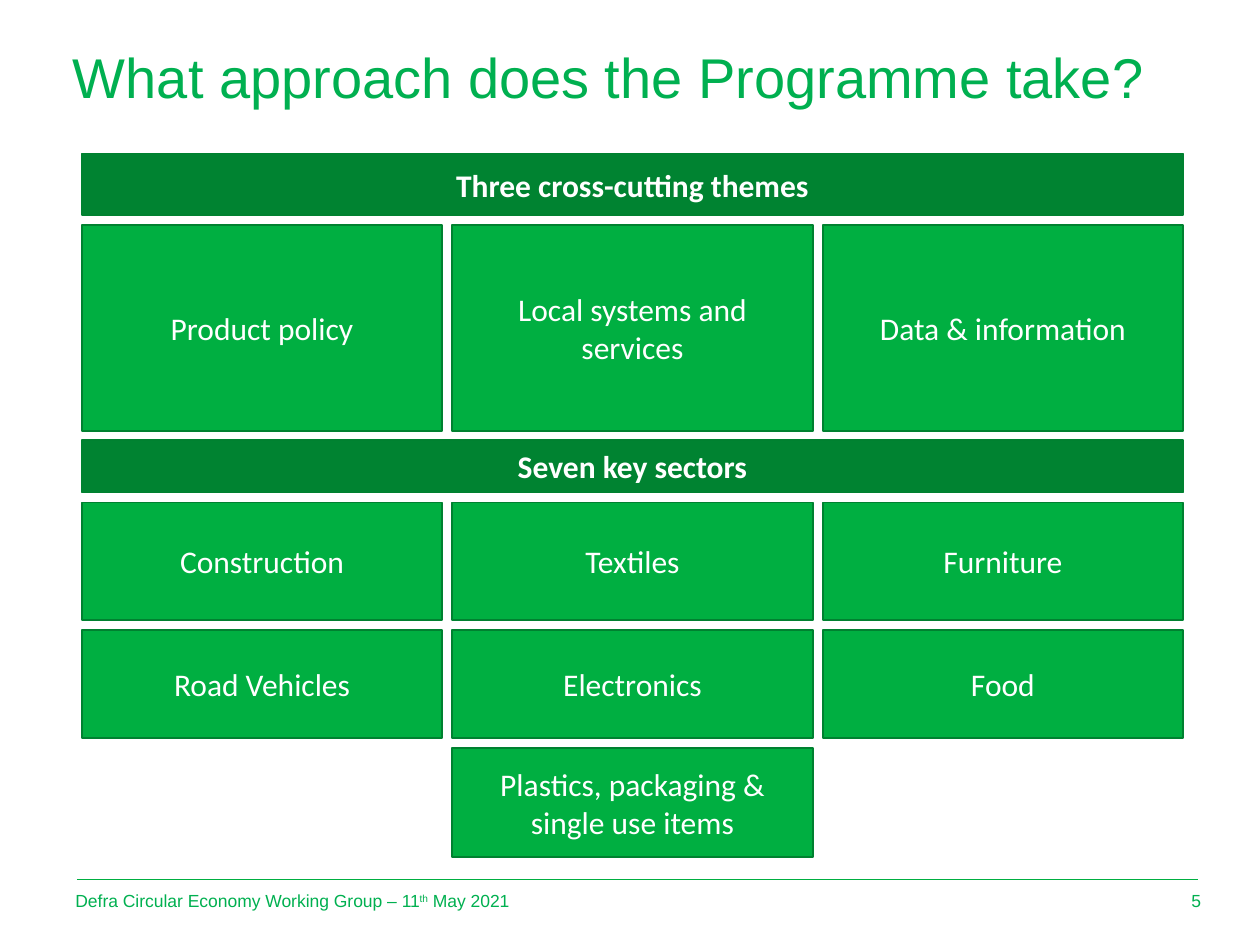
from lxml import etree
from pptx import Presentation
from pptx import util as u
from pptx.dml import color
from pptx.enum import shapes, text
from pptx.oxml import ns

Pt = u.Pt
GREEN, BRIGHT, DARK, EDGE, WHITE = "00B050", "00AF41", "008331", "008130", "FFFFFF"
GAP = 5.7
THEMES = [["Product policy", "Local systems and services", "Data & information"]]
SECTORS = [
    ["Construction", "Textiles", "Furniture"],
    ["Road Vehicles", "Electronics", "Food"],
    [None, "Plastics, packaging & single use items", None],
]


def rgb(value):
    """Turn a hex string into a colour."""
    return color.RGBColor.from_string(value)


def add_run(paragraph, words, size, font, ink, bold=False):
    """Add one styled run to a paragraph."""
    run = paragraph.add_run()
    run.text = words
    run.font.size, run.font.name, run.font.bold = Pt(size), font, bold
    run.font.color.rgb = rgb(ink)
    return run


def add_label(slide, box, align=text.PP_ALIGN.LEFT, anchor=text.MSO_ANCHOR.MIDDLE):
    """Add an empty wrapping text box and return its paragraph."""
    frame = slide.shapes.add_textbox(*map(Pt, box)).text_frame
    frame.word_wrap, frame.vertical_anchor = True, anchor
    paragraph = frame.paragraphs[0]
    paragraph.alignment = align
    return paragraph


def add_tile(slide, box, words, fill, bold=False):
    """Draw a filled rectangle with a centred caption."""
    tile = slide.shapes.add_shape(shapes.MSO_SHAPE.RECTANGLE, *map(Pt, box))
    tile.shadow.inherit = False
    tile.fill.solid()
    tile.fill.fore_color.rgb = rgb(fill)
    tile.line.color.rgb = rgb(EDGE)
    tile.line.width = Pt(1)
    frame = tile.text_frame
    frame.word_wrap, frame.vertical_anchor = True, text.MSO_ANCHOR.MIDDLE
    caption = frame.paragraphs[0]
    caption.alignment = text.PP_ALIGN.CENTER
    add_run(caption, words, 18, "Calibri", WHITE, bold)


def add_title(slide, box):
    """Write the slide title."""
    title = add_label(slide, box, anchor=text.MSO_ANCHOR.TOP)
    title.line_spacing = 0.9
    add_run(title, "What approach does the Programme take?", 32, "Arial", GREEN)


def add_section(slide, box, heading, band_height, rows, row_heights):
    """Draw a heading band over a three-column grid of tiles."""
    left, top, width = box
    add_tile(slide, (left, top, width, band_height), heading, DARK, True)
    tile_width = (width - 2 * GAP) / 3
    y = top + band_height + GAP
    for row, height in zip(rows, row_heights):
        for column, words in enumerate(row):
            if words:
                x = left + column * (tile_width + GAP)
                add_tile(slide, (x, y, tile_width, height), words, BRIGHT)
        y += height + GAP


def add_footer(slide, box):
    """Draw the footer rule, event name and page number."""
    left, top, width, height = box
    rule_y = Pt(top + 2.2)
    rule = slide.shapes.add_connector(
        shapes.MSO_CONNECTOR.STRAIGHT, Pt(left + 7.9), rule_y, Pt(left + width - 8.7), rule_y)
    rule.line.color.rgb = rgb(BRIGHT)
    rule.line.width = Pt(0.5)
    etree.SubElement(rule._element.spPr, ns.qn("a:effectLst"))

    event = add_label(slide, (left, top, 447, height))
    add_run(event, "Defra Circular Economy Working Group – 11", 10, "Arial", GREEN)
    ordinal = add_run(event, "th", 10, "Arial", GREEN)
    ordinal._r.get_or_add_rPr().set("baseline", "30000")
    add_run(event, " May 2021", 10, "Arial", GREEN)

    page = add_label(slide, (left + width - 32.4, top, 32.4, height), text.PP_ALIGN.RIGHT)
    add_run(page, "5", 10, "Arial", GREEN)


def main():
    """Build and save the slide."""
    deck = Presentation()
    deck.slide_width, deck.slide_height = Pt(720), Pt(540)
    slide = deck.slides.add_slide(deck.slide_layouts[6])
    add_title(slide, (34.6, 25.2, 651, 38.2))
    add_section(slide, (46.8, 87.8, 629.3), "Three cross-cutting themes", 35.3, THEMES, [117.4])
    add_section(slide, (46.8, 251.3, 629.3), "Seven key sectors", 30.2, SECTORS, [67, 62, 62])
    add_footer(slide, (36, 500.4, 657.4, 28.8))
    deck.save("out.pptx")


if __name__ == "__main__":
    main()
